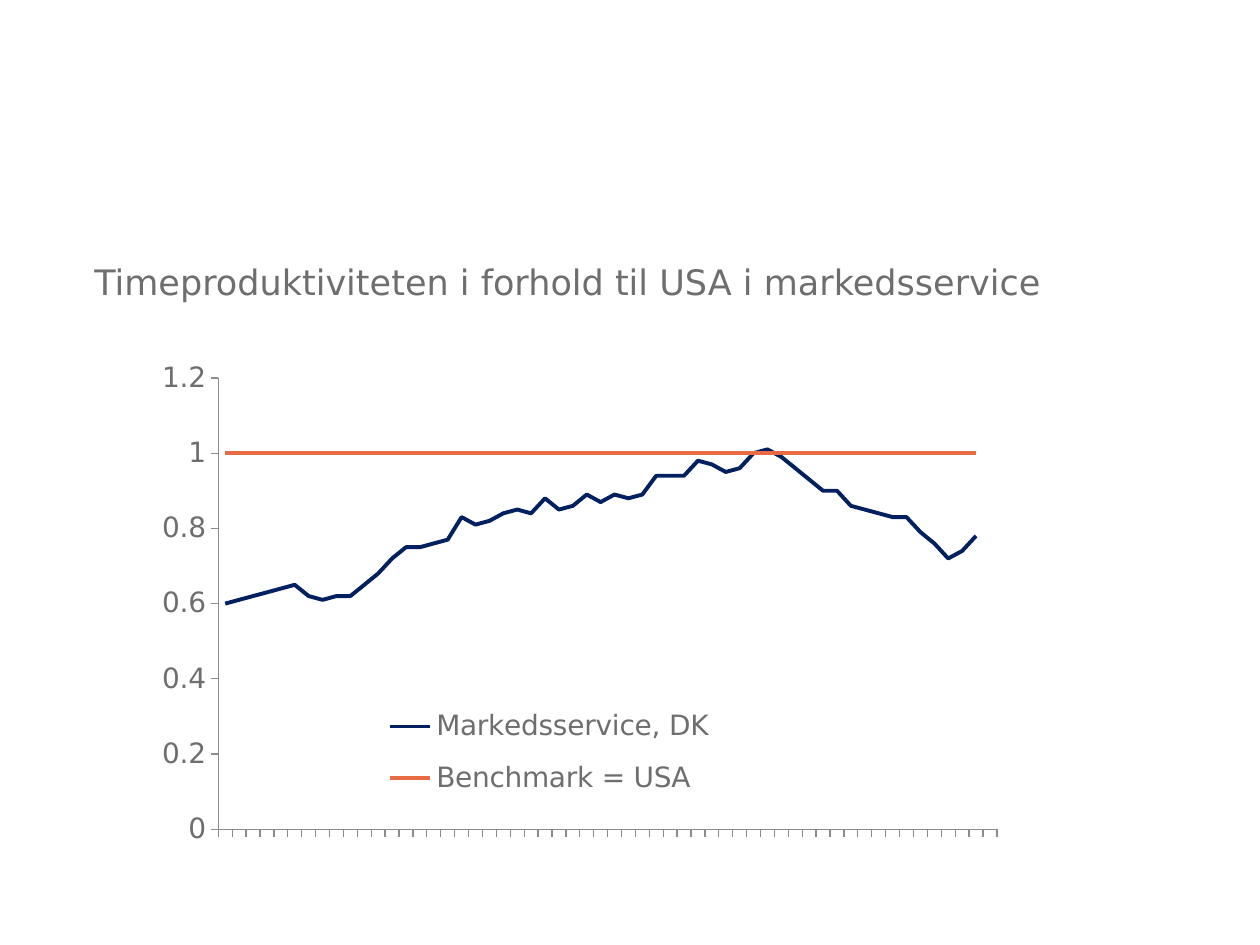
from lxml import etree
from pptx import Presentation
from pptx import util as u
from pptx.chart.data import CategoryChartData
from pptx.dml.color import RGBColor
from pptx.enum import chart as charts, text
from pptx.oxml.ns import qn

GREY = RGBColor(0x6E, 0x6E, 0x6F)
AXIS_GREY = RGBColor(0x8B, 0x8B, 0x8B)
NAVY = RGBColor(0x00, 0x20, 0x60)
ORANGE = RGBColor(0xE7, 0x6C, 0x46)

DENMARK = [
    0.6, 0.61, 0.62, 0.63, 0.64, 0.65, 0.62, 0.61, 0.62, 0.62, 0.65,
    0.68, 0.72, 0.75, 0.75, 0.76, 0.77, 0.83, 0.81, 0.82, 0.84, 0.85,
    0.84, 0.88, 0.85, 0.86, 0.89, 0.87, 0.89, 0.88, 0.89, 0.94, 0.94,
    0.94, 0.98, 0.97, 0.95, 0.96, 1, 1.01, 0.99, 0.96, 0.93, 0.9, 0.9,
    0.86, 0.85, 0.84, 0.83, 0.83, 0.79, 0.76, 0.72, 0.74, 0.78, None,
]
BENCHMARK = [1] * (len(DENMARK) - 1) + [None]


def apply(target, values):
    for name, value in values.items():
        setattr(target, name, value)


def place(parent, index, **values):
    for old in parent.findall(qn("c:layout")):
        parent.remove(old)
    layout = etree.Element(qn("c:layout"))
    manual = etree.SubElement(layout, qn("c:manualLayout"))
    for name, value in values.items():
        etree.SubElement(manual, qn(f"c:{name}")).set("val", str(value))
    parent.insert(index, layout)


class SlideBuilder:
    font_name = "DejaVu Sans"

    def __init__(self, page):
        self.page = page

    def style(self, font, size):
        apply(font, {"name": self.font_name, "size": u.Pt(size), "bold": False})
        font.color.rgb = GREY

    def title(self, words, left, top, width, height):
        box = self.page.shapes.title
        apply(box, {"left": u.Cm(left), "top": u.Cm(top),
                    "width": u.Cm(width), "height": u.Cm(height)})
        frame = box.text_frame
        apply(frame, {"margin_left": 0, "margin_right": 0, "margin_top": 0,
                      "margin_bottom": 0, "word_wrap": True,
                      "auto_size": text.MSO_AUTO_SIZE.NONE,
                      "vertical_anchor": text.MSO_ANCHOR.BOTTOM})
        para = frame.paragraphs[0]
        para.alignment = text.PP_ALIGN.LEFT
        span = para.add_run()
        span.text = words
        self.style(span.font, 20)

    def axis(self, axis, labels, values):
        apply(axis, {"has_major_gridlines": False,
                     "major_tick_mark": charts.XL_TICK_MARK.OUTSIDE,
                     "minor_tick_mark": charts.XL_TICK_MARK.NONE,
                     "tick_label_position": labels, **values})
        axis.format.line.color.rgb = AXIS_GREY
        axis.format.line.width = u.Pt(0.75)

    def line_chart(self, lines, left, top, width, height):
        data = CategoryChartData()
        data.categories = [""] * len(lines[0][1])
        for name, values, _ in lines:
            data.add_series(name, values)
        chart = self.page.shapes.add_chart(
            charts.XL_CHART_TYPE.LINE, u.Cm(left), u.Cm(top),
            u.Cm(width), u.Cm(height), data).chart
        apply(chart, {"has_title": False, "has_legend": True})
        self.style(chart.font, 16)
        chart.plots[0].vary_by_categories = False
        for series, (_, _, color) in zip(chart.plots[0].series, lines):
            series.smooth = False
            series.marker.style = charts.XL_MARKER_STYLE.NONE
            series.format.line.color.rgb = color
            series.format.line.width = u.Pt(2.25)
        self.axis(chart.category_axis, charts.XL_TICK_LABEL_POSITION.NONE, {})
        self.axis(chart.value_axis, charts.XL_TICK_LABEL_POSITION.NEXT_TO_AXIS,
                  {"minimum_scale": 0, "maximum_scale": 1.2, "major_unit": 0.2})
        apply(chart.value_axis.tick_labels,
              {"number_format": "General", "number_format_is_linked": False})
        legend = chart.legend
        apply(legend, {"position": charts.XL_LEGEND_POSITION.RIGHT,
                       "include_in_layout": False})
        self.style(legend.font, 16)
        place(legend._element, 1, xMode="edge", yMode="edge",
              x=0.25, y=0.63, w=0.38, h=0.23)
        plot_area = chart._chartSpace.find(".//" + qn("c:plotArea"))
        place(plot_area, 0, layoutTarget="inner", xMode="edge", yMode="edge",
              x=1.5 / width, y=0.5 / height, w=15.7 / width, h=9.1 / height)


def main():
    deck = Presentation()
    apply(deck, {"slide_width": u.Cm(25.4), "slide_height": u.Cm(19.05)})
    slide = SlideBuilder(deck.slides.add_slide(deck.slide_layouts[5]))
    slide.line_chart(
        [("Markedsservice, DK", DENMARK, NAVY),
         ("Benchmark = USA", BENCHMARK, ORANGE)],
        2.9, 7.12, 18.59, 10.8)
    slide.title("Timeproduktiviteten i forhold til USA i markedsservice",
                1.9, 4.32, 22.4, 1.78)
    deck.save("out.pptx")


if __name__ == "__main__":
    main()
